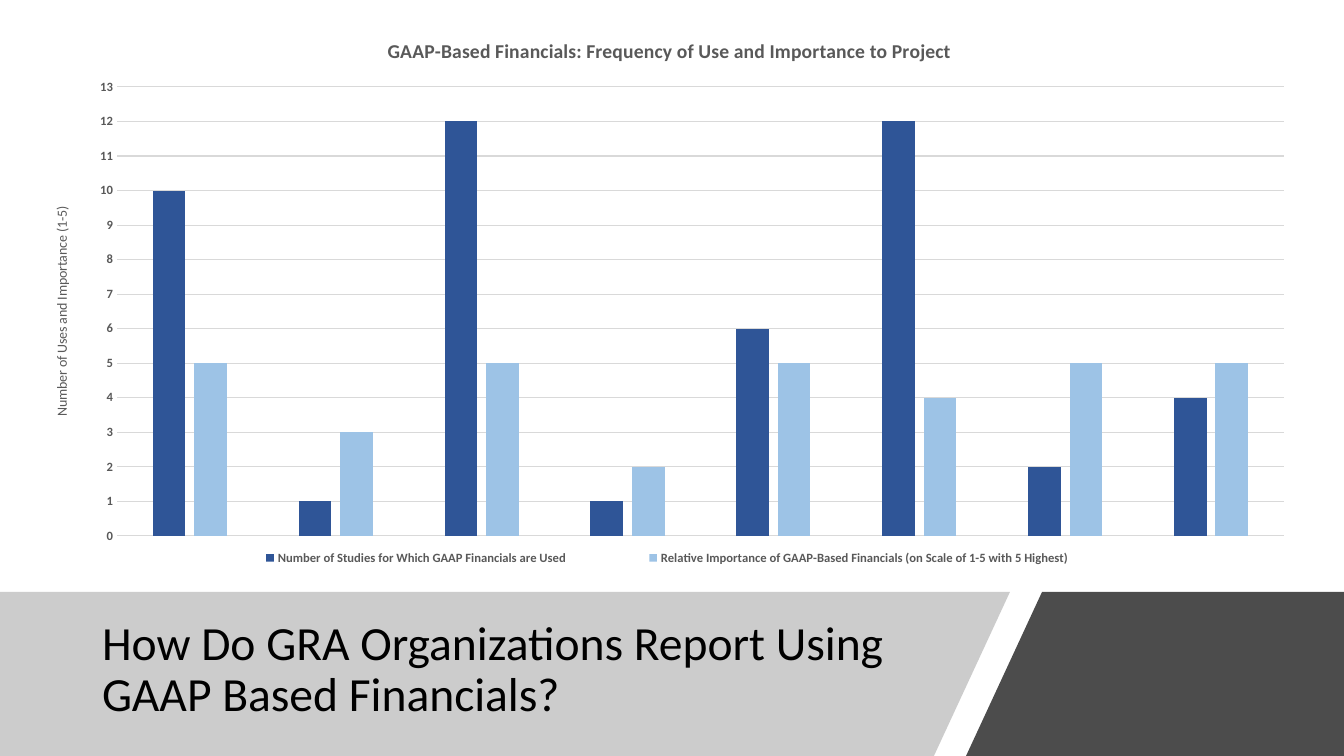
from lxml import etree
from pptx import Presentation
from pptx.chart.data import CategoryChartData
from pptx.dml.color import RGBColor
from pptx.enum.chart import XL_CHART_TYPE, XL_LEGEND_POSITION, XL_TICK_MARK
from pptx.enum.text import MSO_ANCHOR, PP_ALIGN
from pptx.oxml import parse_xml
from pptx.oxml.ns import qn
from pptx.util import Pt

COLUMNS = XL_CHART_TYPE.COLUMN_CLUSTERED
BOTTOM = XL_LEGEND_POSITION.BOTTOM
NO_TICK = XL_TICK_MARK.NONE
MIDDLE = MSO_ANCHOR.MIDDLE
LEFT = PP_ALIGN.LEFT

FONT = "Calibri"
GREY = "595959"
HEADING = "How Do GRA Organizations Report Using GAAP Based Financials?"
CHART_TITLE = "GAAP-Based Financials: Frequency of Use and Importance to Project"
AXIS_TITLE = "Number of Uses and Importance (1-5)"
CATEGORIES = ["1", "2", "3", "4", "5", "6", "7", "8"]
SERIES = [
    ("Number of Studies for Which GAAP Financials are Used",
     "2F5597", [10, 1, 12, 1, 6, 12, 2, 4]),
    ("Relative Importance of GAAP-Based Financials (on Scale of 1-5 with 5 Highest)",
     "9DC3E6", [5, 3, 5, 2, 5, 4, 5, 5]),
]

PAGE_SIZE = (1344, 756)
HEADING_BOX = (92, 610, 851, 121)
CHART_BOX = (31, 17, 1278, 567)
PLOT_BOX = (117, 87, 1167, 449)
LEGEND_BOX = (187, 545, 960, 26)
CHART_TITLE_AT = (384, 34)
AXIS_TITLE_AT = (50, 204)
LEFT_BAND = ([(0, 592), (1010, 592), (934, 756), (0, 756)], "808080", 40)
RIGHT_BAND = ([(1042, 592), (1344, 592), (1344, 756), (966, 756)], "000000", 70)
EMU_PER_PX = 914400 / 100.8


def px(value):
    return round(value * EMU_PER_PX)


def color(code):
    return RGBColor.from_string(code)


def style(font, size, code, bold=False):
    font.name = FONT
    font.size = Pt(size)
    font.bold = bold
    font.color.rgb = color(code)


def paint(shape_format, code):
    shape_format.fill.solid()
    shape_format.fill.fore_color.rgb = color(code)


def add_band(page, points, code, opacity):
    builder = page.shapes.build_freeform(*points[0], scale=EMU_PER_PX)
    builder.add_line_segments(points[1:], close=True)
    band = builder.convert_to_shape()
    band.shadow.inherit = False
    band.line.fill.background()
    paint(band, code)
    tint = band.element.spPr.find(qn("a:solidFill"))[0]
    etree.SubElement(tint, qn("a:alpha")).set("val", str(opacity * 1000))


def add_heading(page):
    title = page.shapes.title
    title.left, title.top, title.width, title.height = map(px, HEADING_BOX)
    title.text_frame.text = HEADING
    title.text_frame.vertical_anchor = MIDDLE
    title.text_frame.word_wrap = True
    para = title.text_frame.paragraphs[0]
    para.alignment = LEFT
    para.line_spacing = 0.9
    style(para.font, 34, "000000")
    page.shapes.element.append(title.element)


def place(part, index, left, top, width=None, height=None):
    chart_left, chart_top, chart_width, chart_height = CHART_BOX
    settings = [("xMode", "edge"), ("yMode", "edge"),
                ("x", (left - chart_left) / chart_width),
                ("y", (top - chart_top) / chart_height)]
    if width:
        settings += [("w", width / chart_width), ("h", height / chart_height)]
    if part.tag == qn("c:plotArea"):
        settings.insert(0, ("layoutTarget", "inner"))
    for old in part.findall(qn("c:layout")):
        part.remove(old)
    layout = parse_xml('<c:layout xmlns:c="http://schemas.openxmlformats.org/'
                       'drawingml/2006/chart"><c:manualLayout/></c:layout>')
    for name, value in settings:
        etree.SubElement(layout[0], qn("c:" + name)).set("val", str(value))
    part.insert(index, layout)


def add_title(owner, text, size, bold, position):
    owner.has_title = True
    title = owner.chart_title if hasattr(owner, "chart_title") else owner.axis_title
    title.text_frame.text = text
    style(title.text_frame.paragraphs[0].font, size, GREY, bold)
    place(title.text_frame._txBody.getparent().getparent(), 1, *position)


def add_usage_chart(page):
    data = CategoryChartData()
    data.categories = CATEGORIES
    for name, code, values in SERIES:
        data.add_series(name, values)
    chart = page.shapes.add_chart(COLUMNS, *map(px, CHART_BOX), data).chart
    style(chart.font, 10, "000000")
    add_title(chart, CHART_TITLE, 14, True, CHART_TITLE_AT)
    chart.category_axis.visible = False

    axis = chart.value_axis
    add_title(axis, AXIS_TITLE, 10, False, AXIS_TITLE_AT)
    axis.minimum_scale, axis.maximum_scale, axis.major_unit = 0, 13, 1
    axis.major_tick_mark = axis.minor_tick_mark = NO_TICK
    axis.format.line.fill.background()
    axis.major_gridlines.format.line.color.rgb = color("D9D9D9")
    axis.major_gridlines.format.line.width = Pt(0.75)
    style(axis.tick_labels.font, 9, GREY, True)

    chart.has_legend = True
    chart.legend.position = BOTTOM
    chart.legend.include_in_layout = False
    style(chart.legend.font, 9, GREY, True)

    plot = chart.plots[0]
    plot.vary_by_categories = False
    plot.gap_width, plot.overlap = 219, -27
    for series, (name, code, values) in zip(plot.series, SERIES):
        paint(series.format, code)
    place(chart.element.find(".//" + qn("c:plotArea")), 0, *PLOT_BOX)
    place(chart.element.find(".//" + qn("c:legend")), 1, *LEGEND_BOX)


def main():
    deck = Presentation()
    deck.slide_width, deck.slide_height = map(px, PAGE_SIZE)
    page = deck.slides.add_slide(deck.slide_layouts[5])
    add_band(page, *LEFT_BAND)
    add_heading(page)
    add_band(page, *RIGHT_BAND)
    add_usage_chart(page)
    deck.save("out.pptx")


if __name__ == "__main__":
    main()
